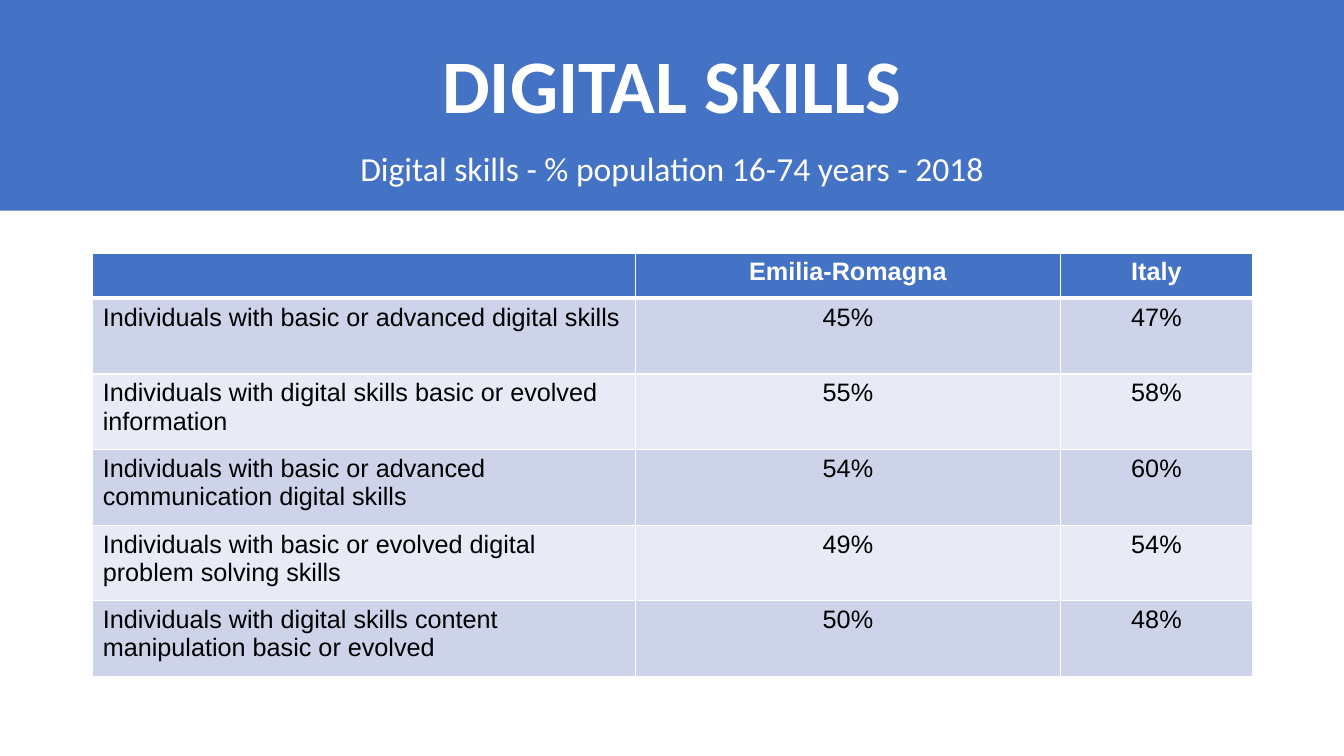
from dataclasses import dataclass

from lxml import etree
from pptx import Presentation
from pptx import util as u
from pptx.dml.color import RGBColor
from pptx.enum import shapes, text
from pptx.oxml.ns import qn


@dataclass(frozen=True)
class Theme:
    accent: str = "4472C4"
    light: str = "FFFFFF"
    dark: str = "000000"
    bands: tuple = ("CDD4EA", "E8EBF5")
    heading_font: str = "Calibri"
    table_font: str = "Arial"
    title_size: int = 54
    subtitle_size: int = 24
    table_size: int = 18


THEME = Theme()
WIDTH, HEIGHT = 13.33, 7.5
MARGIN = 0.92

HEADINGS = ("", "Emilia-Romagna", "Italy")
SKILLS = (
    ("Individuals with basic or advanced digital skills", "45%", "47%"),
    ("Individuals with digital skills basic or evolved information", "55%", "58%"),
    ("Individuals with basic or advanced communication digital skills", "54%", "60%"),
    ("Individuals with basic or evolved digital problem solving skills", "49%", "54%"),
    ("Individuals with digital skills content manipulation basic or evolved", "50%", "48%"),
)
COLUMN_WIDTHS = (5.38, 4.22, 1.9)
HEADING_HEIGHT, SKILL_HEIGHT = 0.45, 0.75


def inches(*lengths):
    return [u.Inches(length) for length in lengths]


def style_paragraph(paragraph, font, size, color, bold=False, centred=True):
    paragraph.alignment = text.PP_ALIGN.CENTER if centred else text.PP_ALIGN.LEFT
    paragraph.font.name = font
    paragraph.font.size = u.Pt(size)
    paragraph.font.bold = bold
    paragraph.font.color.rgb = RGBColor.from_string(color)


def add_heading(slide, box, wording, size, anchor, bold=False):
    frame = slide.shapes.add_textbox(*inches(*box)).text_frame
    frame.word_wrap = True
    frame.vertical_anchor = anchor
    line = frame.paragraphs[0]
    line.text = wording
    line.line_spacing = 0.9
    style_paragraph(line, THEME.heading_font, size, THEME.light, bold)


def add_banner(slide, box):
    left, top, width, height = box
    band = slide.shapes.add_shape(shapes.MSO_SHAPE.RECTANGLE, *inches(*box))
    band.shadow.inherit = False
    band.fill.solid()
    band.fill.fore_color.rgb = RGBColor.from_string(THEME.accent)
    band.line.fill.background()

    # Title and subtitle share the slide margins
    inner_left, inner_width = left + MARGIN, width - 2 * MARGIN
    add_heading(slide, (inner_left, top + 0.15 * height, inner_width, 0.49 * height),
                "DIGITAL SKILLS", THEME.title_size, text.MSO_ANCHOR.BOTTOM, bold=True)
    add_heading(slide, (inner_left, top + 0.7 * height, inner_width, 0.22 * height),
                "Digital skills - % population 16-74 years - 2018",
                THEME.subtitle_size, text.MSO_ANCHOR.TOP)


def set_borders(cell, **weights):
    properties = cell._tc.get_or_add_tcPr()
    for side in "LRTB":
        border = etree.SubElement(properties, qn(f"a:ln{side}"),
                                  w=str(u.Pt(weights.get(side, 1))))
        fill = etree.SubElement(border, qn("a:solidFill"))
        etree.SubElement(fill, qn("a:srgbClr"), val=THEME.light)


def add_skills_table(slide, box):
    rows = (HEADINGS, *SKILLS)
    table = slide.shapes.add_table(len(rows), len(HEADINGS), *inches(*box)).table
    for column, width in zip(table.columns, COLUMN_WIDTHS):
        column.width = u.Inches(width)

    for r, row in enumerate(rows):
        is_heading = r == 0
        table.rows[r].height = u.Inches(HEADING_HEIGHT if is_heading else SKILL_HEIGHT)
        row_fill = THEME.accent if is_heading else THEME.bands[(r - 1) % 2]
        for c, wording in enumerate(row):
            cell = table.cell(r, c)
            # Borders come before the fill in the cell properties
            set_borders(cell, T=3 if r == 1 else 1, B=3 if is_heading else 1)
            cell.fill.solid()
            cell.fill.fore_color.rgb = RGBColor.from_string(row_fill)
            cell.text = wording
            style_paragraph(cell.text_frame.paragraphs[0], THEME.table_font,
                            THEME.table_size, THEME.light if is_heading else THEME.dark,
                            bold=is_heading, centred=c > 0)


def main():
    deck = Presentation()
    deck.slide_width, deck.slide_height = inches(WIDTH, HEIGHT)
    slide = deck.slides.add_slide(deck.slide_layouts[6])
    add_banner(slide, (0, 0, WIDTH, 2.09))
    add_skills_table(slide, (MARGIN, 2.51, sum(COLUMN_WIDTHS),
                             HEADING_HEIGHT + len(SKILLS) * SKILL_HEIGHT))
    deck.save("out.pptx")


if __name__ == "__main__":
    main()
